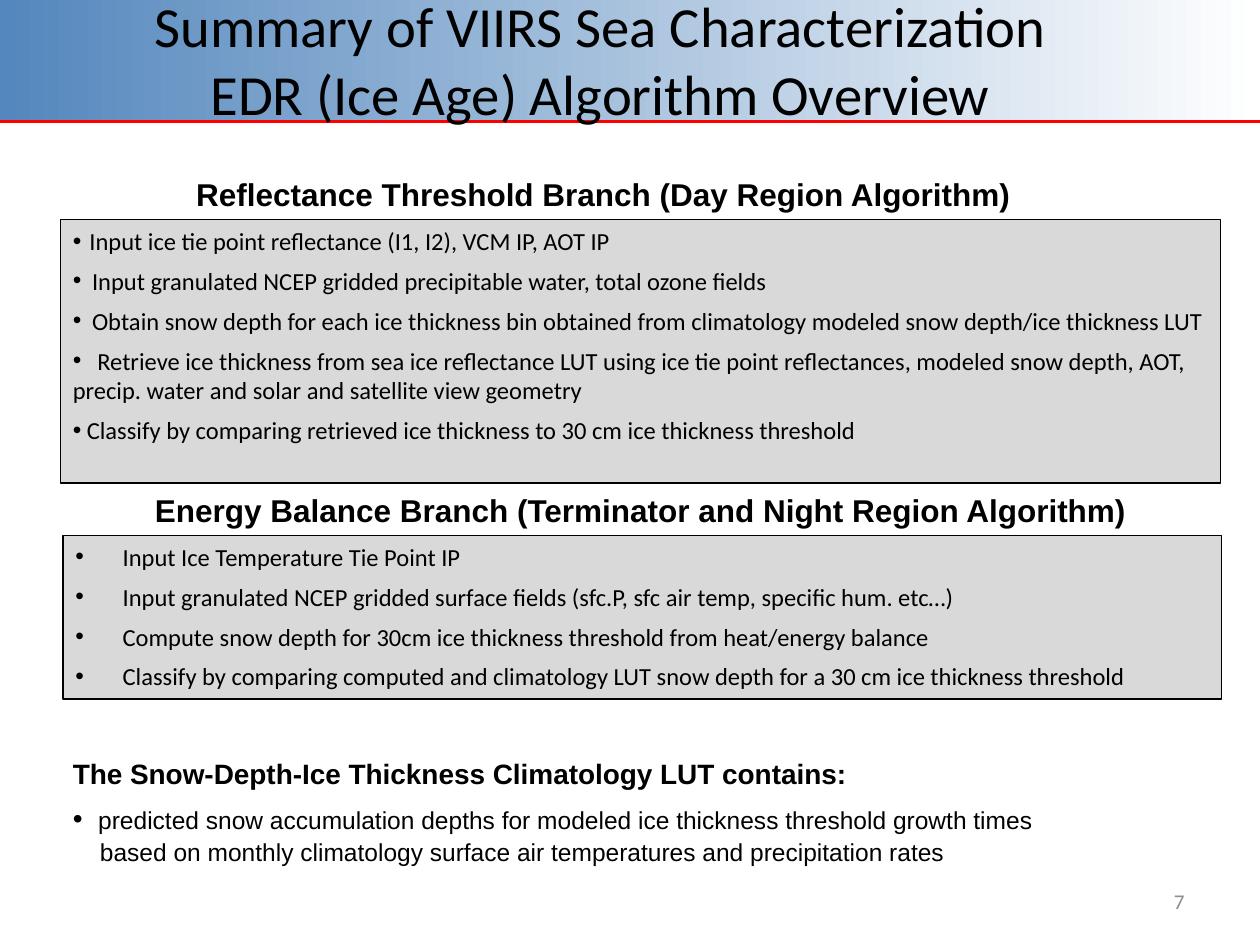
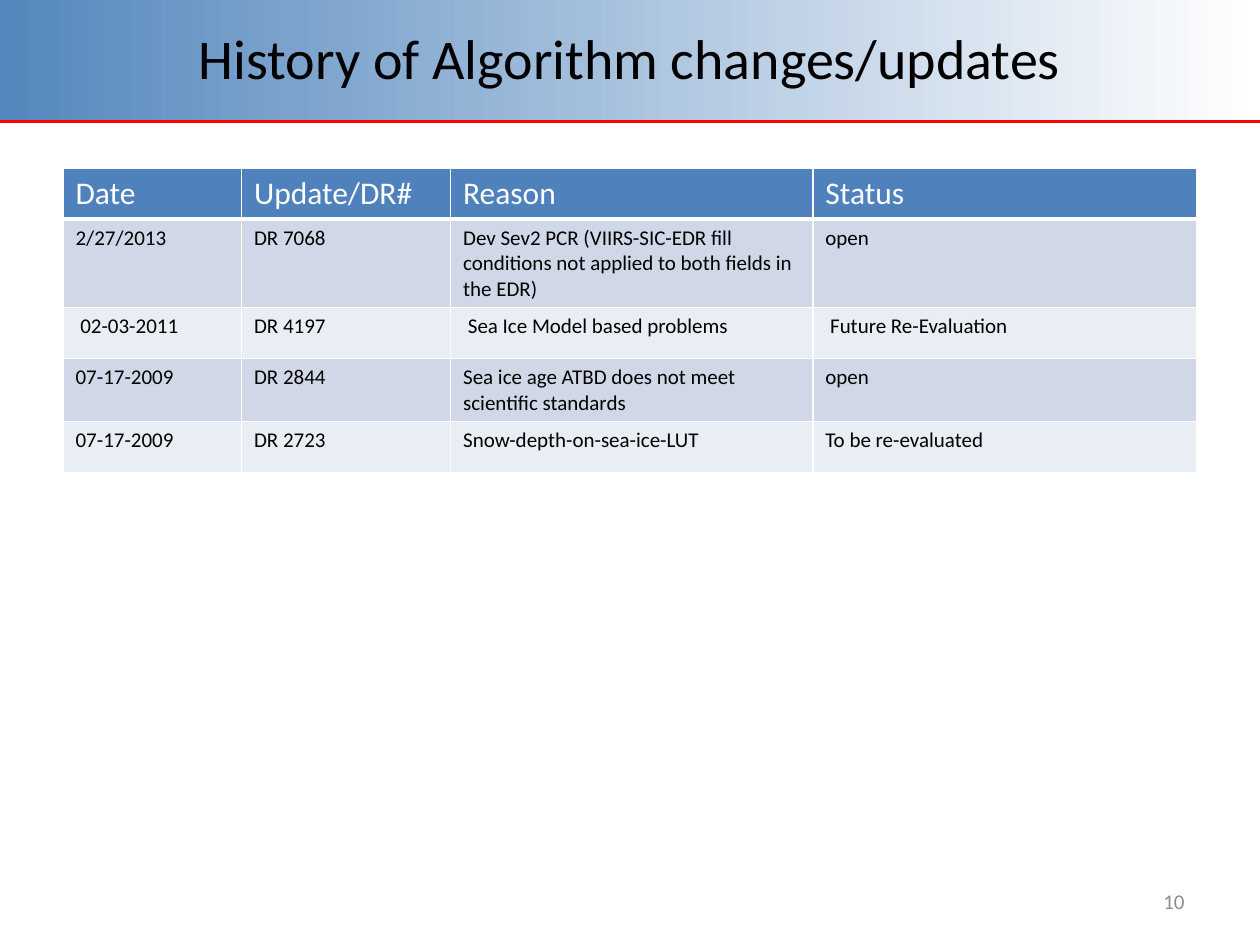
from lxml.etree import SubElement as Sub
from pptx import Presentation
from pptx.dml.color import RGBColor as Rgb
from pptx.enum.shapes import MSO_CONNECTOR as Conn, MSO_SHAPE as Kind
from pptx.enum.text import MSO_ANCHOR as Anchor, PP_ALIGN as Align
from pptx.oxml.ns import qn
from pptx.util import Pt

COLORS = {
    "blue": "5487BD", "white": "FFFFFF", "red": "FF0000", "black": "000000",
    "grey": "8C8C8C", "panel": "D9D9D9", "head": "4F81BD",
    "dark": "D0D8E8", "light": "E9EDF4",
}
WIDE, HIGH = 720, 540
EDGE = 69.5  # bottom of the title band


def rgb(name):
    return Rgb.from_string(COLORS[name])


class Deck:
    def __init__(self):
        self.prs = Presentation()
        self.prs.slide_width, self.prs.slide_height = Pt(WIDE), Pt(HIGH)
        self.slide = None

    # Shared frame: band, rule, title and page number
    def page(self, title, number, box, size):
        self.slide = self.prs.slides.add_slide(self.prs.slide_layouts[6])
        band = self.rect(0, -0.5, WIDE, EDGE + 0.5)
        band.fill.gradient()
        band.fill.gradient_angle = 0
        for stop, name in zip(band.fill.gradient_stops, ("blue", "white")):
            stop.color.rgb = rgb(name)
        band.line.fill.background()
        self.rule(EDGE)
        self.label(title, box, size, align=Align.CENTER, anchor=Anchor.MIDDLE)
        self.label(str(number), (516, 500.5, 168, 29), 12, color="grey",
                   align=Align.RIGHT, anchor=Anchor.MIDDLE)

    def rect(self, *box):
        shape = self.slide.shapes.add_shape(Kind.RECTANGLE, *map(Pt, box))
        shape.shadow.inherit = False
        return shape

    def rule(self, y):
        line = self.slide.shapes.add_connector(
            Conn.STRAIGHT, Pt(0), Pt(y), Pt(WIDE), Pt(y))
        line.line.color.rgb = rgb("red")
        line.line.width = Pt(1.25)
        Sub(line._element.spPr, qn("a:effectLst"))

    # Text
    def text_box(self, box, anchor=Anchor.TOP):
        frame = self.slide.shapes.add_textbox(*map(Pt, box)).text_frame
        frame.word_wrap = True
        frame.vertical_anchor = anchor
        return frame

    def words(self, para, text, size, font="Calibri", color="black",
              bold=False, align=Align.LEFT):
        para.alignment = align
        run = para.add_run()
        run.text = text
        run.font.name, run.font.size = font, Pt(size)
        run.font.bold = bold
        run.font.color.rgb = rgb(color)

    def label(self, text, box, size, anchor=Anchor.TOP, **style):
        frame = self.text_box(box, anchor)
        self.words(frame.paragraphs[0], text, size, **style)
        return frame

    def bullet(self, para, left=0, first=0, tab=None, scale=100):
        props = para._p.get_or_add_pPr()
        props.set("marL", str(Pt(left)))
        props.set("indent", str(Pt(first)))
        Sub(props, qn("a:buSzPct"), val=str(scale * 1000))
        Sub(props, qn("a:buFont"), typeface="Arial")
        Sub(props, qn("a:buChar"), char="•")
        if tab:
            tabs = Sub(props, qn("a:tabLst"))
            Sub(tabs, qn("a:tab"), pos=str(Pt(tab)), algn="l")

    # Grey box of steps; a tab sets the gap where lines wrap to the edge
    def panel(self, box, steps, hang=0):
        shape = self.rect(*box)
        shape.fill.solid()
        shape.fill.fore_color.rgb = rgb("panel")
        shape.line.color.rgb = rgb("black")
        shape.line.width = Pt(0.75)
        frame = shape.text_frame
        frame.word_wrap = True
        frame.vertical_anchor = Anchor.TOP
        for i, (gap, text) in enumerate(steps):
            para = frame.add_paragraph() if i else frame.paragraphs[0]
            self.bullet(para, hang, -hang, gap)
            if i:
                para.space_before = Pt(6)
            self.words(para, "\t" + text if gap else text, 14)

    # Table
    def border(self, cell, base):
        props = cell._tc.get_or_add_tcPr()
        for i, side in enumerate("LRTB"):
            width = base if side == "B" else 1
            line = props.makeelement(qn("a:ln" + side), {"w": str(Pt(width))})
            fill = Sub(line, qn("a:solidFill"))
            Sub(fill, qn("a:srgbClr"), val=COLORS["white"])
            props.insert(i, line)

    def table(self, left, top, cols, height, rows):
        grid = self.slide.shapes.add_table(
            len(rows), len(cols), Pt(left), Pt(top),
            Pt(sum(cols)), Pt(height * len(rows))).table
        for col, width in zip(grid.columns, cols):
            col.width = Pt(width)
        for r, row in enumerate(rows):
            grid.rows[r].height = Pt(height)
            shade = ("light", "dark")[r % 2] if r else "head"
            for c, text in enumerate(row):
                cell = grid.cell(r, c)
                cell.fill.solid()
                cell.fill.fore_color.rgb = rgb(shade)
                self.border(cell, 1 if r else 3)
                self.words(cell.text_frame.paragraphs[0], text,
                           12 if r else 18, color="black" if r else "white")


DAY = [
    (9.5, "Input ice tie point reflectance (I1, I2), VCM IP, AOT IP"),
    (11, "Input granulated NCEP gridded precipitable water, total ozone fields"),
    (11, "Obtain snow depth for each ice thickness bin obtained from climatology "
         "modeled snow depth/ice thickness LUT"),
    (14, "Retrieve ice thickness from sea ice reflectance LUT using ice tie point "
         "reflectances, modeled snow depth, AOT, precip. water and solar and "
         "satellite view geometry"),
    (8, "Classify by comparing retrieved ice thickness to 30 cm ice thickness "
        "threshold"),
]
NIGHT = [
    (None, "Input Ice Temperature Tie Point IP"),
    (None, "Input granulated NCEP gridded surface fields (sfc.P, sfc air temp, "
           "specific hum. etc…)"),
    (None, "Compute snow depth for 30cm ice thickness threshold from heat/energy "
           "balance"),
    (None, "Classify by comparing computed and climatology LUT snow depth for a "
           "30 cm ice thickness threshold"),
]
CHANGES = [
    ("Date", "Update/DR#", "Reason", "Status"),
    ("2/27/2013", "DR 7068", "Dev Sev2 PCR (VIIRS-SIC-EDR fill conditions not "
     "applied to both fields in the EDR)", "open"),
    (" 02-03-2011", "DR 4197", " Sea Ice Model based problems",
     " Future Re-Evaluation"),
    ("07-17-2009", "DR 2844", "Sea ice age ATBD does not meet scientific "
     "standards", "open"),
    ("07-17-2009", "DR 2723", "Snow-depth-on-sea-ice-LUT", "To be re-evaluated"),
]


def main():
    deck = Deck()
    bold = {"font": "Arial", "bold": True}

    # Algorithm overview
    deck.page("Summary of VIIRS Sea Characterization EDR (Ice Age) Algorithm "
              "Overview", 7, (61, 2, 564, 63), 32.4)
    deck.label("Energy Balance Branch (Terminator and Night Region Algorithm)",
               (81.5, 277, 631, 29), 18, **bold)
    deck.label("Reflectance Threshold Branch (Day Region Algorithm)",
               (105, 96.5, 550, 29), 18, **bold)
    deck.panel((34.5, 125.5, 663, 150.5), DAY)
    deck.panel((36, 306, 662, 93.5), NIGHT, hang=27)

    # Lookup table contents
    note = deck.label("The Snow-Depth-Ice Thickness Climatology LUT contains:",
                      (34.5, 429, 663, 71), 16, **bold)
    para = note.add_paragraph()
    deck.bullet(para, 14.5, -14.5, scale=114)
    para.space_before = Pt(8)
    deck.words(para, "predicted snow accumulation depths for modeled ice "
               "thickness threshold growth times", 14, "Arial")
    para = note.add_paragraph()
    para._p.get_or_add_pPr().set("marL", str(Pt(15.5)))
    para.space_before = Pt(2)
    deck.words(para, "based on monthly climatology surface air temperatures and "
               "precipitation rates", 14, "Arial")

    # Change history
    deck.page("History of Algorithm changes/updates", 10, (36, 0, 648, 65), 32)
    deck.table(36, 96, (102, 119.5, 207, 219.5), 29.2, CHANGES)

    deck.prs.save("out.pptx")


if __name__ == "__main__":
    main()
